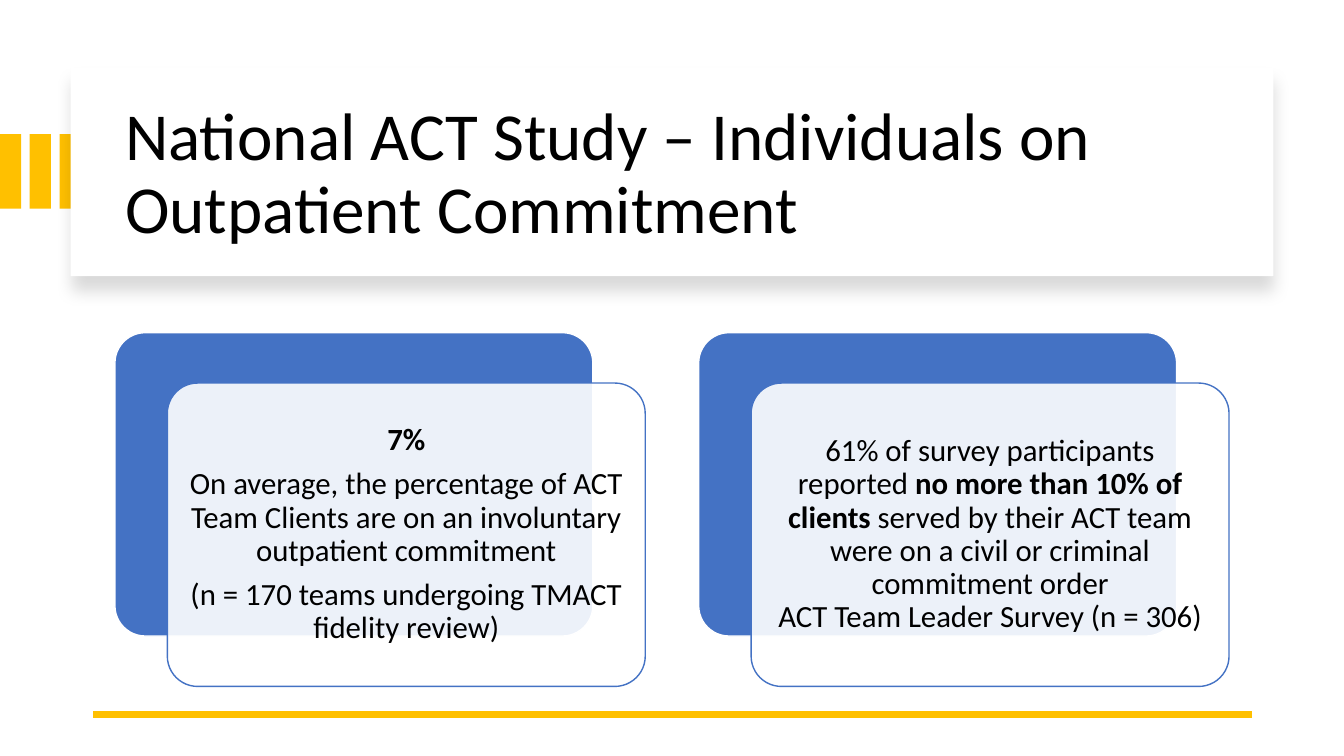
from dataclasses import dataclass

from lxml.etree import SubElement
from pptx import Presentation
from pptx.dml.color import RGBColor
from pptx.enum.shapes import MSO_CONNECTOR, MSO_SHAPE
from pptx.enum.text import MSO_ANCHOR, PP_ALIGN
from pptx.oxml import parse_xml
from pptx.oxml.ns import nsdecls, qn
from pptx.util import Inches, Pt


@dataclass(frozen=True)
class Theme:
    font: str = "Calibri"
    title_size: Pt = Pt(48)
    body_size: Pt = Pt(22)
    text: RGBColor = RGBColor(0, 0, 0)
    white: RGBColor = RGBColor(255, 255, 255)
    gold: RGBColor = RGBColor(0xFF, 0xC0, 0x00)
    blue: RGBColor = RGBColor(0x44, 0x72, 0xC4)


theme = Theme()
presentation = Presentation()
presentation.slide_width = Inches(13.33)
presentation.slide_height = Inches(7.5)
slide = presentation.slides.add_slide(presentation.slide_layouts[5])


def add_block(kind, left, top, width, height, fill, line=None):
    shape = slide.shapes.add_shape(
        kind, Inches(left), Inches(top), Inches(width), Inches(height))
    shape.shadow.inherit = False
    shape.fill.solid()
    shape.fill.fore_color.rgb = fill
    if line is None:
        shape.line.fill.background()
    else:
        shape.line.color.rgb = line
        shape.line.width = Pt(1)
    return shape


def style_paragraph(paragraph, size, alignment):
    paragraph.alignment = alignment
    paragraph.line_spacing = 0.9
    paragraph.font.name = theme.font
    paragraph.font.size = size
    paragraph.font.color.rgb = theme.text


# Gold bars at the left edge
BAR_WIDTH, BAR_PITCH = 0.21, 0.295
for bar in range(3):
    add_block(MSO_SHAPE.RECTANGLE, bar * BAR_PITCH, 1.33, BAR_WIDTH, 0.74, theme.gold)

# White title panel with a soft shadow below
panel = add_block(MSO_SHAPE.RECTANGLE, 0.7, 0.67, 11.93, 2.07, theme.white)
effects = panel._element.spPr.find(qn("a:effectLst"))
effects.append(parse_xml(
    f'<a:outerShdw {nsdecls("a")} blurRad="{Pt(11)}" dist="{Pt(10)}" dir="5400000" '
    'algn="t" rotWithShape="0"><a:srgbClr val="000000"><a:alpha val="15000"/>'
    '</a:srgbClr></a:outerShdw>'))

# Title, stacked in front of its panel
title = slide.shapes.title
title.left, title.top = Inches(1.14), Inches(0.89)
title.width, title.height = Inches(11.13), Inches(1.7)
title.text_frame.text = "National ACT Study – Individuals on Outpatient Commitment"
title.text_frame.vertical_anchor = MSO_ANCHOR.MIDDLE
style_paragraph(title.text_frame.paragraphs[0], theme.title_size, PP_ALIGN.LEFT)
panel._element.addnext(title._element)

# Gold rule at the foot
rule = slide.shapes.add_connector(
    MSO_CONNECTOR.STRAIGHT, Inches(12.42), Inches(7.09), Inches(0.92), Inches(7.09))
rule.line.color.rgb = theme.gold
rule.line.width = Pt(4.5)
SubElement(rule._element.spPr, qn("a:effectLst"))

# Cards: each paragraph is a list of (text, bold) runs; None breaks the line
cards = [
    [
        [("7%", True)],
        [("On average, the percentage of ACT Team Clients are on an involuntary "
          "outpatient commitment", False)],
        [("(n = 170 teams undergoing TMACT fidelity review)", False)],
    ],
    [
        [("61% of survey participants reported ", False),
         ("no more than 10% of clients ", True),
         ("served by their ACT team were on a civil or criminal commitment order", False),
         None,
         ("ACT Team Leader Survey (n = 306)", False)],
    ],
]
CARD_LEFT, CARD_TOP, CARD_PITCH = 1.14, 3.3, 5.79
CARD_WIDTH, CARD_HEIGHT = 4.74, 3.01
OFFSET_X, OFFSET_Y = 0.52, 0.5

for column, paragraphs in enumerate(cards):
    left = CARD_LEFT + column * CARD_PITCH
    back = add_block(MSO_SHAPE.ROUNDED_RECTANGLE, left, CARD_TOP,
                     CARD_WIDTH, CARD_HEIGHT, theme.blue, theme.white)
    front = add_block(MSO_SHAPE.ROUNDED_RECTANGLE, left + OFFSET_X, CARD_TOP + OFFSET_Y,
                      CARD_WIDTH, CARD_HEIGHT, theme.white, theme.blue)
    back.adjustments[0] = front.adjustments[0] = 0.1
    color = front._element.spPr.find(qn("a:solidFill")).find(qn("a:srgbClr"))
    SubElement(color, qn("a:alpha"), val="90000")

    frame = front.text_frame
    frame.word_wrap = True
    frame.vertical_anchor = MSO_ANCHOR.MIDDLE
    frame.margin_left = frame.margin_right = Inches(0.09)
    frame.margin_top = frame.margin_bottom = Inches(0.09)
    for index, runs in enumerate(paragraphs):
        paragraph = frame.add_paragraph() if index else frame.paragraphs[0]
        style_paragraph(paragraph, theme.body_size, PP_ALIGN.CENTER)
        paragraph.space_after = Pt(7.7)
        for part in runs:
            if part is None:
                paragraph.add_line_break()
                continue
            run = paragraph.add_run()
            run.text, run.font.bold = part

presentation.save("out.pptx")
